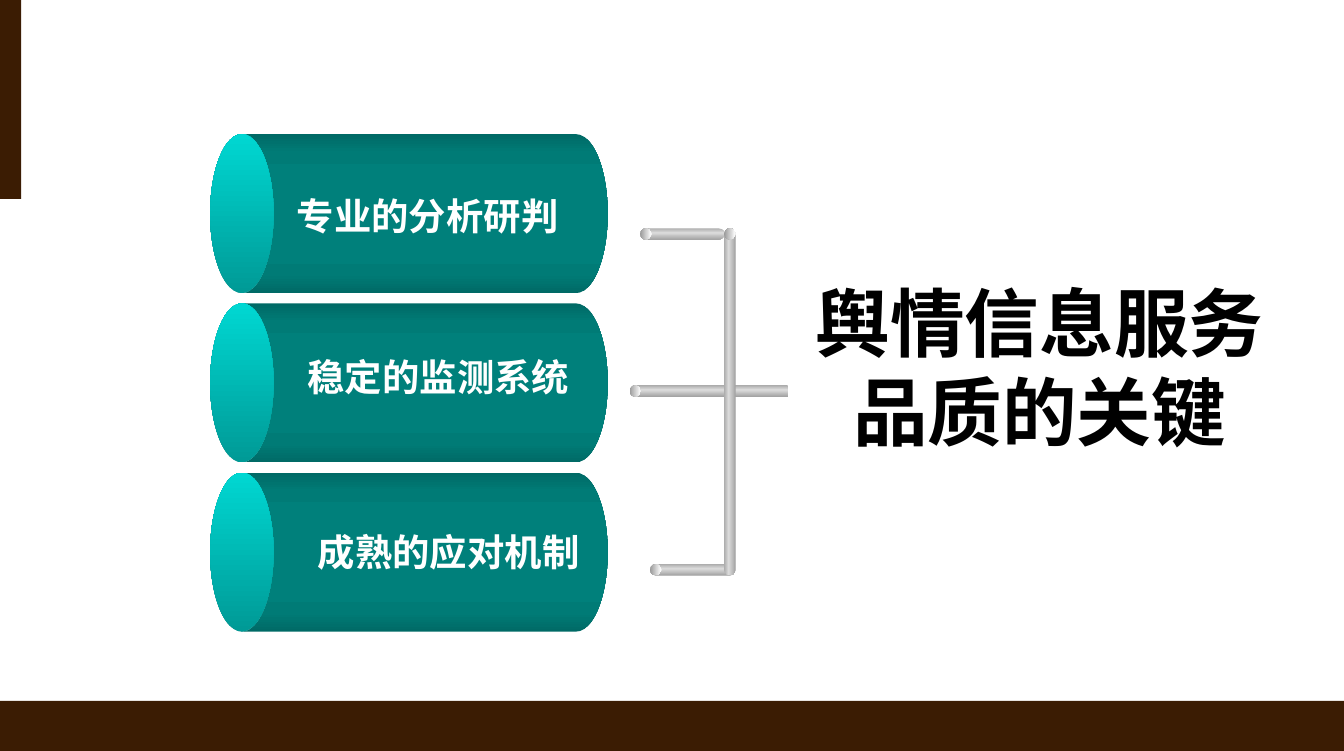
from dataclasses import dataclass

from pptx import Presentation
from pptx.dml.color import RGBColor
from pptx.enum.shapes import MSO_SHAPE as Shape
from pptx.enum.text import MSO_AUTO_SIZE as AutoSize, PP_ALIGN as Align
from pptx.oxml import parse_xml
from pptx.oxml.ns import nsdecls, qn
from pptx.util import Pt


@dataclass(frozen=True)
class Theme:
    font: str = "Noto Sans CJK SC"
    title_size: int = 40
    label_size: int = 20
    bar: str = "3B1C03"
    paper: str = "FFFFFF"
    title: str = "000000"
    label: str = "FFFFFF"
    # Gradients are (position in percent, colour) pairs.
    body: tuple = ((0, "006A66"), (12, "007B76"), (25, "00807B"),
                   (75, "00807B"), (88, "007B76"), (100, "006A66"))
    cap: tuple = ((0, "009A96"), (100, "00D7D2"))
    pipe: tuple = ((0, "ACACAC"), (40, "DCDCDC"), (100, "A4A4A4"))
    ball: tuple = ((0, "999999"), (100, "FFFFFF"))


class SlideBuilder:
    def __init__(self, slide, theme):
        self.shapes = slide.shapes
        self.theme = theme

    def paint(self, shape, fill, angle=0):
        """Fill with a plain colour or with gradient stops, without outline or shadow."""
        if isinstance(fill, str):
            shape.fill.solid()
            shape.fill.fore_color.rgb = RGBColor.from_string(fill)
        else:
            stops = "".join(
                f'<a:gs pos="{position * 1000}"><a:srgbClr val="{color}"/></a:gs>'
                for position, color in fill
            )
            gradient = parse_xml(
                f'<a:gradFill {nsdecls("a")} rotWithShape="1"><a:gsLst>{stops}</a:gsLst>'
                f'<a:lin ang="{angle * 60000}" scaled="0"/></a:gradFill>'
            )
            shape._element.spPr.find(qn("a:prstGeom")).addnext(gradient)
        shape.line.fill.background()
        shape.shadow.inherit = False

    def preset(self, kind, left, top, width, height, fill, angle=0):
        shape = self.shapes.add_shape(kind, Pt(left), Pt(top), Pt(width), Pt(height))
        self.paint(shape, fill, angle)
        return shape

    def cylinder(self, left, top, width, height, cap_width):
        """Draw a lying cylinder: a can turned to the left with a lit cap over its lid."""
        turn = (width - height) / 2
        body = self.preset(
            Shape.CAN, left + turn, top - turn, height, width, self.theme.body
        )
        body.adjustments[0] = cap_width / height
        body.rotation = 270
        turn = (height - cap_width) / 2
        cap = self.preset(
            Shape.OVAL, left - turn, top + turn, height, cap_width, self.theme.cap
        )
        cap.rotation = 270

    def pipe(self, left, top, width, height, rounded=True):
        kind = Shape.ROUNDED_RECTANGLE if rounded else Shape.RECTANGLE
        angle = 90 if width > height else 0
        shape = self.preset(kind, left, top, width, height, self.theme.pipe, angle)
        if rounded:
            shape.adjustments[0] = 0.5

    def ball(self, left, top, size):
        self.preset(Shape.OVAL, left, top, size, size, self.theme.ball)

    def text(self, words, left, top, width, height, *, size, color,
             align=Align.LEFT, wrap=False, fill=None):
        box = self.shapes.add_textbox(Pt(left), Pt(top), Pt(width), Pt(height))
        if fill:
            self.paint(box, fill)
        frame = box.text_frame
        frame.word_wrap = wrap
        frame.auto_size = AutoSize.NONE if wrap else AutoSize.SHAPE_TO_FIT_TEXT
        paragraph = frame.paragraphs[0]
        paragraph.alignment = align
        paragraph.line_spacing = Pt(size * 1.2)
        run = paragraph.add_run()
        run.text = words
        run.font.size = Pt(size)
        run.font.bold = True
        run.font.color.rgb = RGBColor.from_string(color)
        run.font.name = self.theme.font
        run._r.get_or_add_rPr().append(
            parse_xml(f'<a:ea {nsdecls("a")} typeface="{self.theme.font}"/>')
        )


def main():
    deck = Presentation()
    deck.slide_width, deck.slide_height = Pt(720), Pt(402.5)
    theme = Theme()
    page = SlideBuilder(deck.slides.add_slide(deck.slide_layouts[6]), theme)

    page.preset(Shape.RECTANGLE, 0, 0, 11.3, 106.7, theme.bar)
    page.preset(Shape.RECTANGLE, 0, 375.6, 720, 26.9, theme.bar)
    page.text("舆情信息服务品质的关键", 421.9, 144.7, 270, 158.4, size=theme.title_size,
              color=theme.title, align=Align.CENTER, wrap=True, fill=theme.paper)

    thickness, spine = 6, 388
    branch_tops = (122.4, 206.6, 302.4)
    branches = (  # left, right, rounded
        (343, spine, True),
        (337.3, 422, False),
        (348.3, spine + thickness, True),
    )
    for top, (left, right, rounded) in zip(branch_tops, branches):
        start = left if rounded else left + thickness / 2
        page.pipe(start, top, right - start, thickness, rounded)
        page.ball(left, top, thickness)
    page.pipe(spine, branch_tops[0], thickness, branch_tops[-1] - branch_tops[0] + thickness)
    page.ball(spine, branch_tops[0], thickness)

    factors = (  # words, label left, label top
        ("专业的分析研判", 151.9, 100.1),
        ("稳定的监测系统", 157.7, 186.5),
        ("成熟的应对机制", 163.2, 280.1),
    )
    for row, (words, left, top) in enumerate(factors):
        page.cylinder(112.6, 71.9 + 90.7 * row, 213, 85.2, 34)
        page.text(words, left, top, 156.2, 31.7, size=theme.label_size, color=theme.label)

    deck.save("out.pptx")


if __name__ == "__main__":
    main()
